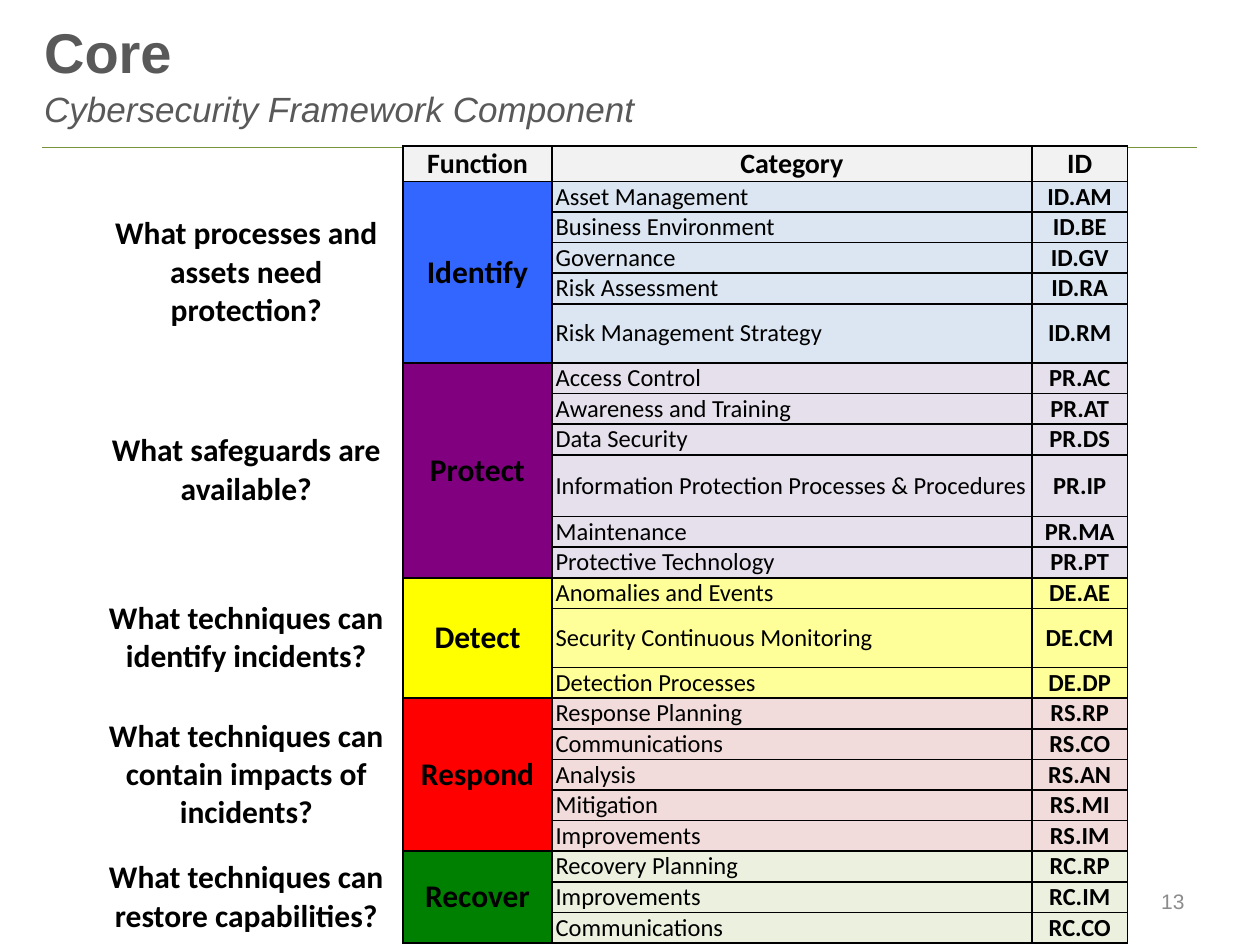
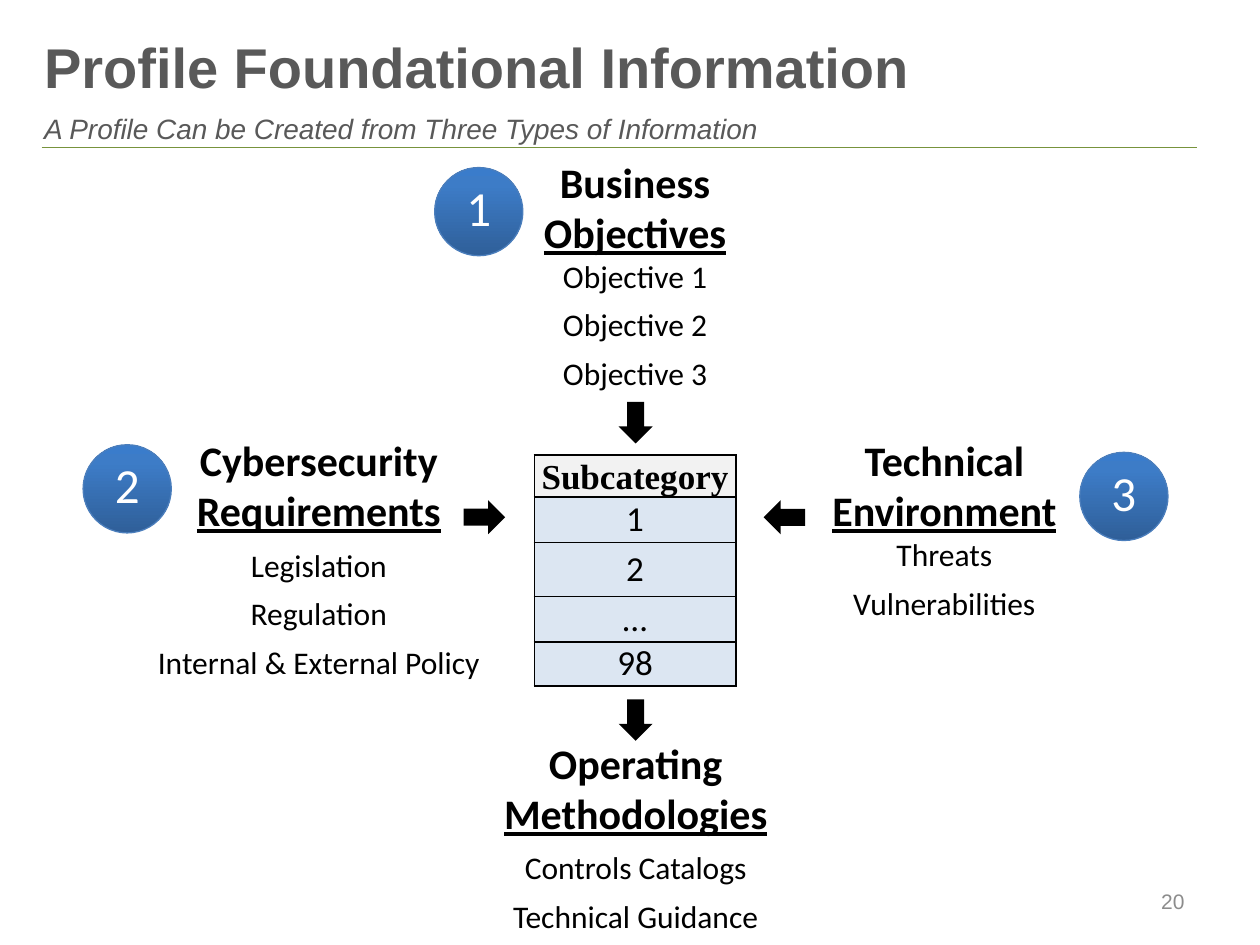
from copy import deepcopy
from dataclasses import dataclass

from lxml import etree
from pptx import Presentation
from pptx.dml.color import RGBColor
from pptx.enum import shapes, text
from pptx.oxml.ns import qn
from pptx.util import Inches, Pt


@dataclass(frozen=True)
class Theme:
    heading_font: str = "Arial"
    body_font: str = "Calibri"
    serif_font: str = "Times New Roman"
    ink: str = "000000"
    white: str = "FFFFFF"
    title: str = "595959"
    page_number: str = "8C8C8C"
    rule: str = "77933C"
    header_fill: str = "F2F2F2"
    row_fill: str = "DCE6F2"
    badge_line: str = "4B7EBC"
    badge_stops: tuple = ((0, "2F5F99"), (0.8, "3D7CC7"), (1, "3A7CCB"))
    title_size: int = 32
    badge_size: int = 28
    block_heading_size: int = 24
    subcategory_size: int = 20
    body_size: int = 18
    column_heading_size: int = 16
    category_size: int = 14
    page_number_size: int = 12


THEME = Theme()
CENTER = text.PP_ALIGN.CENTER
MIDDLE = text.MSO_ANCHOR.MIDDLE
BOTTOM = text.MSO_ANCHOR.BOTTOM
SIDES = "LRTB"

# Function, question, strong fill, light fill, ID prefix, categories
FUNCTIONS = [
    ("Identify", "What processes and assets need protection?", "3366FF", "DCE6F2", "ID",
     [("Asset Management", "AM"), ("Business Environment", "BE"), ("Governance", "GV"),
      ("Risk Assessment", "RA"), ("Risk Management Strategy", "RM")]),
    ("Protect", "What safeguards are available?", "800080", "E6E0EC", "PR",
     [("Access Control", "AC"), ("Awareness and Training", "AT"), ("Data Security", "DS"),
      ("Information Protection Processes & Procedures", "IP"), ("Maintenance", "MA"),
      ("Protective Technology", "PT")]),
    ("Detect", "What techniques can identify incidents?", "FFFF00", "FFFF99", "DE",
     [("Anomalies and Events", "AE"), ("Security Continuous Monitoring", "CM"),
      ("Detection Processes", "DP")]),
    ("Respond", "What techniques can contain impacts of incidents?", "FF0000", "F2DCDB", "RS",
     [("Response Planning", "RP"), ("Communications", "CO"), ("Analysis", "AN"),
      ("Mitigation", "MI"), ("Improvements", "IM")]),
    ("Recover", "What techniques can restore capabilities?", "008000", "EBF1DE", "RC",
     [("Recovery Planning", "RP"), ("Improvements", "IM"), ("Communications", "CO")]),
]
TALL_ROWS = {"ID.RM": 0.47, "PR.IP": 0.49, "DE.CM": 0.47}

# Box, heading start, underlined heading end, heading on two paragraphs, items
BLOCKS = [
    ((4.13, 1.19, 1.82, 1.99), "Business ", "Objectives", False,
     ["Objective 1", "Objective 2", "Objective 3"]),
    ((1.14, 3.4, 2.78, 2.07), "Cybersecurity", "Requirements", True,
     ["Legislation", "Regulation", "Internal & External Policy"]),
    ((5.9, 3.4, 3.19, 1.6), "Technical ", "Environment", False,
     ["Threats", "Vulnerabilities"]),
    ((3.45, 5.8, 3.19, 1.68), "Operating", "Methodologies", True,
     ["Controls Catalogs", "Technical Guidance"]),
]
BADGES = [("1", 3.45, 1.33), ("2", 0.66, 3.53), ("3", 8.57, 3.59)]
ARROWS = [(4.88, 3.22, 90), (3.68, 3.97, 0), (6.06, 3.97, 180), (4.88, 5.58, 90)]


def rgb(code):
    return RGBColor.from_string(code)


def box_inches(box):
    return [Inches(length) for length in box]


def write(paragraph, words, *, size, font=THEME.body_font, color=THEME.ink, bold=False,
          italic=False, underline=False, align=None, after=None):
    """Add one formatted run to a paragraph."""
    run = paragraph.add_run()
    run.text = words
    run.font.size, run.font.name = Pt(size), font
    run.font.bold, run.font.italic, run.font.underline = bold, italic, underline
    run.font.color.rgb = rgb(color)
    if align is not None:
        paragraph.alignment = align
    if after is not None:
        paragraph.space_after = Pt(after)


# Shared title, rule and page number
def set_title_style(prs):
    style = prs.slide_master.element.find(".//" + qn("p:titleStyle"))
    style.find(".//" + qn("a:defRPr")).set("sz", str(THEME.title_size * 100))


def add_framed_slide(prs, heading, subtitle, subtitle_size, title_top, number):
    slide = prs.slides.add_slide(prs.slide_layouts[5])
    rule = slide.shapes.add_connector(shapes.MSO_CONNECTOR.STRAIGHT,
                                      *box_inches((0.33, 1.17, 9.5, 1.17)))
    rule.line.color.rgb, rule.line.width = rgb(THEME.rule), Pt(0.75)
    etree.SubElement(rule._element.spPr, qn("a:effectLst"))

    title = slide.shapes.title
    title.left, title.top, title.width, title.height = box_inches((0.25, title_top, 9.25, 0.83))
    frame = title.text_frame
    frame.auto_size, frame.vertical_anchor = text.MSO_AUTO_SIZE.NONE, BOTTOM
    line = frame.paragraphs[0]
    line.line_spacing = Pt(26)
    style = dict(font=THEME.heading_font, color=THEME.title, align=text.PP_ALIGN.LEFT)
    write(line, heading, size=THEME.title_size, bold=True, **style)
    line.add_line_break()
    write(line, subtitle, size=subtitle_size, italic=True, **style)

    footer = slide.shapes.add_textbox(*box_inches((7.17, 6.95, 2.33, 0.4))).text_frame
    footer.word_wrap, footer.vertical_anchor = True, MIDDLE
    write(footer.paragraphs[0], number, size=THEME.page_number_size, font=THEME.heading_font,
          color=THEME.page_number, align=text.PP_ALIGN.RIGHT)
    return slide


# Tables
def add_plain_table(slide, left, top, widths, heights):
    box = box_inches((left, top, sum(widths), sum(heights)))
    table = slide.shapes.add_table(len(heights), len(widths), *box).table
    table.first_row = table.horz_banding = False
    for column, width in zip(table.columns, widths):
        column.width = Inches(width)
    for row, height in zip(table.rows, heights):
        row.height = Inches(height)
    return table


def style_cell(cell, fill=None, sides=SIDES, inset=0.03):
    """Set margins, borders on the given sides, and fill."""
    cell.margin_left = cell.margin_right = Inches(inset)
    cell.margin_top = cell.margin_bottom = 0
    cell.vertical_anchor = MIDDLE
    properties = cell._tc.get_or_add_tcPr()
    for side in SIDES:
        line = etree.SubElement(properties, qn("a:ln" + side), w=str(Pt(1)))
        if side in sides:
            solid = etree.SubElement(line, qn("a:solidFill"))
            etree.SubElement(solid, qn("a:srgbClr"), val=THEME.ink)
        else:
            etree.SubElement(line, qn("a:noFill"))
    if fill:
        cell.fill.solid()
        cell.fill.fore_color.rgb = rgb(fill)
    else:
        cell.fill.background()


def fill_cell(cell, words, **style):
    write(cell.text_frame.paragraphs[0], words, **style)


def add_core_table(slide, left, top, height):
    ids = [f"{prefix}.{code}" for *_, prefix, categories in FUNCTIONS for _, code in categories]
    header_height = 0.28
    regular = (height - header_height - sum(TALL_ROWS.values())) / (len(ids) - len(TALL_ROWS))
    heights = [header_height] + [TALL_ROWS.get(row_id, regular) for row_id in ids]
    table = add_plain_table(slide, left, top, (2.49, 1.18, 3.81, 0.76), heights)

    # Column headings
    corner = table.cell(0, 0)
    style_cell(corner, sides="R")
    etree.SubElement(corner.text_frame.paragraphs[0]._p, qn("a:endParaRPr"),
                     sz=str(THEME.category_size * 100))
    for column, heading in enumerate(("Function", "Category", "ID"), 1):
        style_cell(table.cell(0, column), THEME.header_fill)
        fill_cell(table.cell(0, column), heading, size=THEME.column_heading_size,
                  bold=True, align=CENTER)

    # One band of rows per function
    first = 1
    for function, question, strong, light, prefix, categories in FUNCTIONS:
        for row, (category, code) in enumerate(categories, first):
            style_cell(table.cell(row, 0), sides="R")
            style_cell(table.cell(row, 1), strong)
            style_cell(table.cell(row, 2), light)
            style_cell(table.cell(row, 3), light)
            fill_cell(table.cell(row, 2), category, size=THEME.category_size)
            fill_cell(table.cell(row, 3), f"{prefix}.{code}", size=THEME.category_size,
                      bold=True, align=CENTER)
        for column, label in enumerate((question, function)):
            table.cell(first, column).merge(table.cell(row, column))
            fill_cell(table.cell(first, column), label, size=THEME.body_size,
                      bold=True, align=CENTER)
        first = row + 1


def add_subcategory_table(slide, left, top):
    table = add_plain_table(slide, left, top, (1.6,), (0.31, 0.36, 0.43, 0.36, 0.35))
    header = table.cell(0, 0)
    style_cell(header, THEME.header_fill)
    header.vertical_anchor = BOTTOM
    fill_cell(header, "Subcategory", size=THEME.subcategory_size, font=THEME.serif_font,
              bold=True, align=CENTER)
    for row, number in enumerate(("1", "2", "…", "98"), 1):
        style_cell(table.cell(row, 0), THEME.row_fill, inset=0.01)
        fill_cell(table.cell(row, 0), number, size=THEME.subcategory_size, align=CENTER)


# Parts around the subcategory table
def add_block(slide, box, start, end, two_paragraphs, items):
    frame = slide.shapes.add_textbox(*box_inches(box)).text_frame
    frame.word_wrap = True
    frame.auto_size = text.MSO_AUTO_SIZE.SHAPE_TO_FIT_TEXT
    style = dict(size=THEME.block_heading_size, bold=True, align=CENTER)
    heading = frame.paragraphs[0]
    write(heading, start, **style)
    if two_paragraphs:
        write(frame.add_paragraph(), end, underline=True, after=6, **style)
    else:
        write(heading, end, underline=True, **style)
    for item in items:
        write(frame.add_paragraph(), item, size=THEME.body_size, align=CENTER, after=6)


def add_badge(slide, number, left, top):
    badge = slide.shapes.add_shape(shapes.MSO_SHAPE.OVAL, *box_inches((left, top, 0.7, 0.7)))
    badge.shadow.inherit = False
    badge.line.color.rgb, badge.line.width = rgb(THEME.badge_line), Pt(0.75)
    badge.fill.gradient()
    badge.fill.gradient_angle = 90
    stop_list = badge._element.spPr.find(".//" + qn("a:gsLst"))
    stop_list.append(deepcopy(stop_list[-1]))
    for stop, (position, color) in zip(badge.fill.gradient_stops, THEME.badge_stops):
        stop.position, stop.color.rgb = position, rgb(color)
    badge.text_frame.vertical_anchor = BOTTOM
    write(badge.text_frame.paragraphs[0], number, size=THEME.badge_size,
          color=THEME.white, align=CENTER)


def add_arrow(slide, left, top, rotation):
    arrow = slide.shapes.add_shape(shapes.MSO_SHAPE.RIGHT_ARROW,
                                   *box_inches((left, top, 0.33, 0.27)))
    arrow.shadow.inherit = False
    arrow.rotation = rotation
    arrow.fill.solid()
    arrow.fill.fore_color.rgb = rgb(THEME.ink)
    arrow.line.fill.background()


# Slides
def build_core(prs):
    slide = add_framed_slide(prs, "Core", "Cybersecurity Framework Component", 20, 0.25, "13")
    add_core_table(slide, 0.71, 1.16, 6.33)


def build_profile(prs):
    slide = add_framed_slide(prs, "Profile Foundational Information",
                             "A Profile Can be Created from Three Types of Information",
                             16, 0.37, "20")
    add_subcategory_table(slide, 4.24, 3.61)
    for block in BLOCKS:
        add_block(slide, *block)
    for arrow in ARROWS:
        add_arrow(slide, *arrow)
    for badge in BADGES:
        add_badge(slide, *badge)


def main():
    prs = Presentation()
    prs.slide_width, prs.slide_height = Inches(10), Inches(7.5)
    set_title_style(prs)
    build_core(prs)
    build_profile(prs)
    prs.save("out.pptx")


if __name__ == "__main__":
    main()
